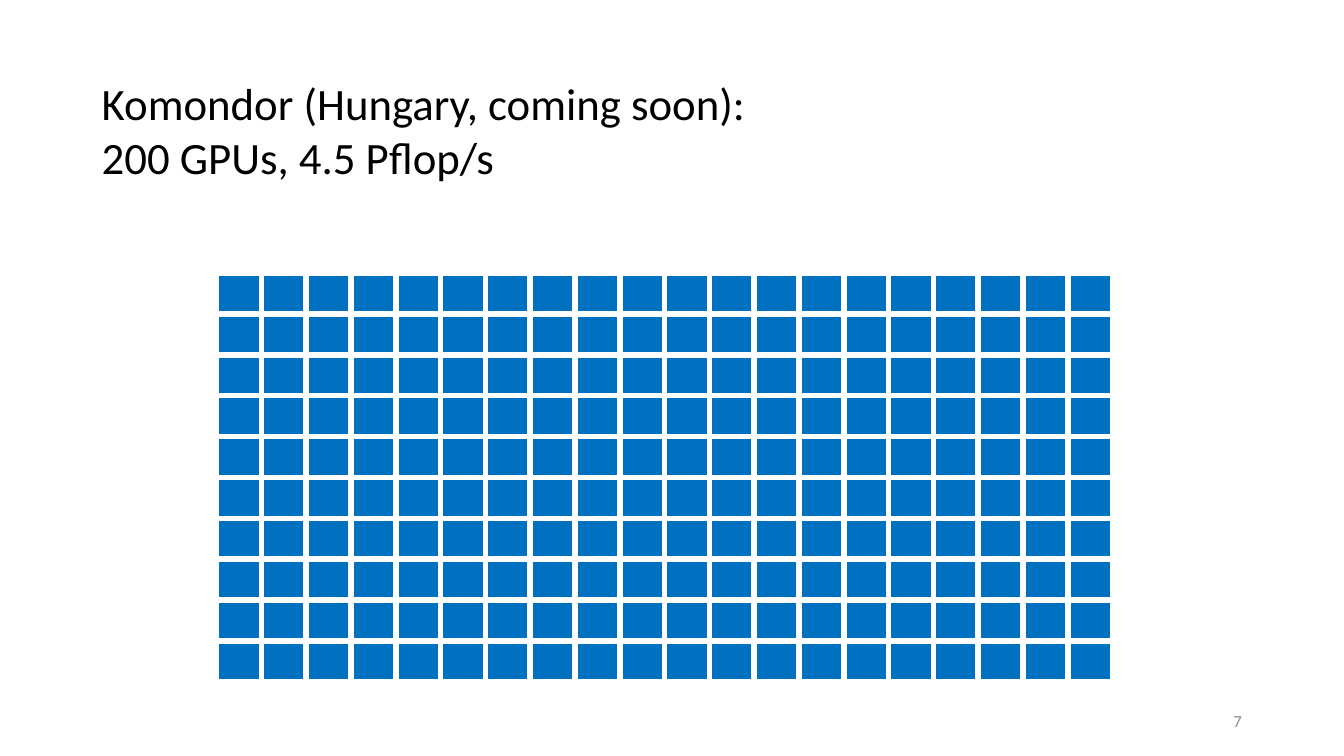
from dataclasses import dataclass

from lxml.etree import SubElement
from pptx import Presentation
from pptx.dml.color import RGBColor
from pptx.enum.text import MSO_ANCHOR, MSO_AUTO_SIZE, PP_ALIGN
from pptx.oxml.ns import qn
from pptx.slide import Slide
from pptx.table import _Cell
from pptx.text.text import TextFrame
from pptx.util import Cm, Pt


@dataclass(frozen=True)
class Theme:
    font: str = "Calibri"
    ink: str = "000000"
    muted: str = "8C8C8C"
    gpu: str = "0070C0"
    gap: str = "FFFFFF"
    title: int = 32
    number: int = 12
    border: float = 4.5


@dataclass(frozen=True)
class Grid:
    left: float
    top: float
    rows: int
    cols: int
    width: float
    height: float


THEME = Theme()
GPUS = Grid(left=5.46, top=6.88, rows=10, cols=20, width=1.13, height=1.03)


def style(frame: TextFrame, size: int, color: str, align: PP_ALIGN) -> None:
    for para in frame.paragraphs:
        para.alignment = align
        for run in para.runs:
            run.font.name = THEME.font
            run.font.size = Pt(size)
            run.font.color.rgb = RGBColor.from_string(color)


def add_title(slide: Slide, text: str) -> None:
    title = slide.shapes.title
    title.left, title.top = Cm(2.31), Cm(1.78)
    title.width, title.height = Cm(17.17), Cm(3)
    frame = title.text_frame
    frame.text = text
    frame.word_wrap = False
    frame.auto_size = MSO_AUTO_SIZE.SHAPE_TO_FIT_TEXT
    frame.vertical_anchor = MSO_ANCHOR.TOP
    style(frame, THEME.title, THEME.ink, PP_ALIGN.LEFT)


def add_number(slide: Slide, text: str) -> None:
    box = slide.shapes.add_textbox(Cm(23.93), Cm(17.65), Cm(7.62), Cm(1.02))
    frame = box.text_frame
    frame.text = text
    frame.word_wrap = True
    frame.vertical_anchor = MSO_ANCHOR.MIDDLE
    style(frame, THEME.number, THEME.muted, PP_ALIGN.RIGHT)


def set_border(cell: _Cell) -> None:
    """Draw all four sides; the schema wants them ahead of the cell fill."""
    props = cell._tc.get_or_add_tcPr()
    for spot, side in enumerate(("a:lnL", "a:lnR", "a:lnT", "a:lnB")):
        line = SubElement(props, qn(side), w=str(Pt(THEME.border)))
        fill = SubElement(line, qn("a:solidFill"))
        SubElement(fill, qn("a:srgbClr"), val=THEME.gap)
        props.insert(spot, line)


def add_grid(slide: Slide, grid: Grid) -> None:
    table = slide.shapes.add_table(
        grid.rows, grid.cols, Cm(grid.left), Cm(grid.top),
        Cm(grid.cols * grid.width), Cm(grid.rows * grid.height),
    ).table
    table.first_row = table.horz_banding = False
    for col in table.columns:
        col.width = Cm(grid.width)
    for row in table.rows:
        row.height = Cm(grid.height)
    for cell in table.iter_cells():
        cell.margin_top = cell.margin_bottom = Cm(0)
        cell.fill.solid()
        cell.fill.fore_color.rgb = RGBColor.from_string(THEME.gpu)
        set_border(cell)


def main() -> None:
    deck = Presentation()
    deck.slide_width, deck.slide_height = Cm(33.87), Cm(19.05)
    slide = deck.slides.add_slide(deck.slide_layouts.get_by_name("Title Only"))
    add_grid(slide, GPUS)
    add_title(slide, "Komondor (Hungary, coming soon):\n200 GPUs, 4.5 Pflop/s")
    add_number(slide, "7")
    deck.save("out.pptx")


if __name__ == "__main__":
    main()
